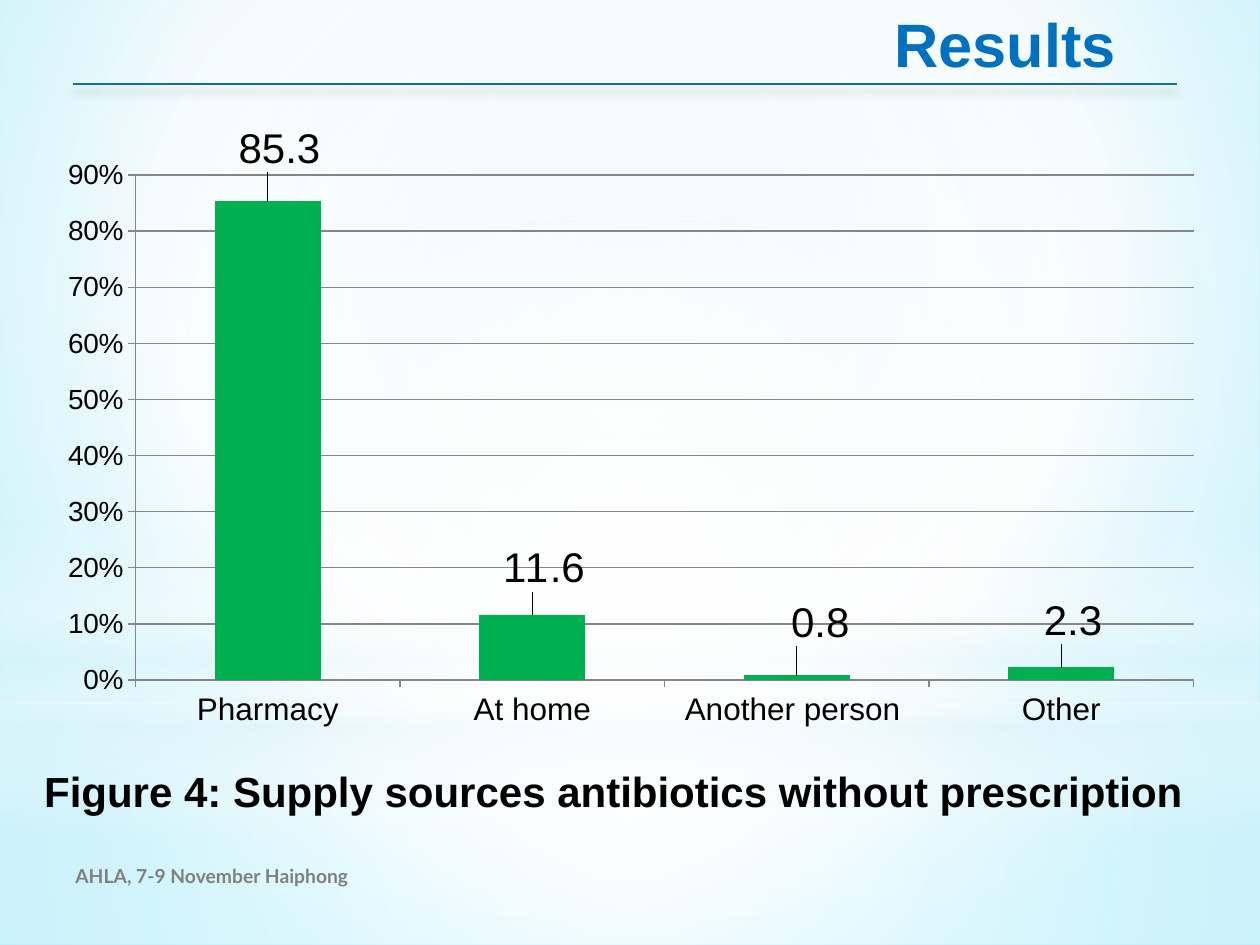
from lxml.etree import SubElement
from pptx import Presentation
from pptx.chart.data import CategoryChartData
from pptx.dml.color import RGBColor
from pptx.enum.chart import XL_CHART_TYPE as ChartType, XL_LABEL_POSITION as LabelPosition
from pptx.enum.chart import XL_TICK_MARK as TickMark
from pptx.enum.shapes import MSO_CONNECTOR as Connector, MSO_SHAPE as Shape
from pptx.enum.text import MSO_ANCHOR as Anchor, MSO_AUTO_SIZE as AutoSize, PP_ALIGN as Align
from pptx.oxml import parse_xml
from pptx.oxml.ns import nsdecls, qn
from pptx.util import Inches, Pt

WIDTH, HEIGHT = Inches(10), Inches(7.5)
CENTER = (50, 50, 50, 50)
BACKDROP = [
    (Shape.RECTANGLE, (0, 0.744, 1, 0.256), CENTER,
     [(0, "FFFFFF", 91), (37, "FFFFFF", 76), (100, "DEF5FA", 79)]),
    (Shape.RECTANGLE, (0, 0, 1, 0.744), CENTER,
     [(0, "FFFFFF", 89), (48, "FFFFFF", 62), (100, "DEF5FA", 79)]),
    (Shape.RECTANGLE, (0, 0.55, 1, 0.333), None,
     [(0, "FFFFFF", 0), (29, "FFFFFF", 30), (45, "DEF5FA", 40),
      (55, "FFFFFF", 26), (65, "DEF5FA", 60), (100, "FFFFFF", 0)]),
    (Shape.OVAL, (0, 0.233, 1, 0.744), CENTER, [(0, "FFFFFF", 100), (56, "FFFFFF", 0)]),
]
SOURCES = [
    ("Pharmacy", 0.853, "85.3", (0.01, -0.04)),
    ("At home", 0.116, "11.6", (0.01, -0.03)),
    ("Another person ", 0.008, "0.8", (0.02, -0.04)),
    ("Other", 0.023, "2.3", (0.01, -0.03)),
]


def color(value):
    return RGBColor.from_string(value)


def place(box):
    left, top, width, height = box
    return (round(left * WIDTH), round(top * HEIGHT),
            round(width * WIDTH), round(height * HEIGHT))


def set_values(target, values):
    for name, value in values.items():
        setattr(target, name, value)


def set_font(font, size, name="Arial", shade="000000", bold=False):
    set_values(font, {"size": Pt(size), "name": name, "bold": bold})
    font.color.rgb = color(shade)


def set_gradient(element, stops, focus):
    stop_xml = "".join(
        f'<a:gs pos="{position * 1000}"><a:srgbClr val="{shade}">'
        f'<a:alpha val="{opacity * 1000}"/></a:srgbClr></a:gs>'
        for position, shade, opacity in stops)
    direction = '<a:lin ang="5400000" scaled="0"/>'
    if focus:
        sides = " ".join(f'{side}="{share * 1000}"' for side, share in zip("ltrb", focus))
        direction = f'<a:path path="circle"><a:fillToRect {sides}/></a:path>'
    gradient = parse_xml(f'<a:gradFill {nsdecls("a")} rotWithShape="1">'
                         f'<a:gsLst>{stop_xml}</a:gsLst>{direction}</a:gradFill>')
    empty = element.find(".//" + qn("a:noFill"))
    empty.getparent().replace(empty, gradient)


def add_backdrop(slide):
    slide.background.fill.background()
    set_gradient(slide._element,
                 [(0, "CDEFF7", 100), (60, "FFFFFF", 100), (100, "7CE7FF", 100)],
                 (20, 10, 20, 60))
    for kind, box, focus, stops in BACKDROP:
        shape = slide.shapes.add_shape(kind, *place(box))
        shape.shadow.inherit = False
        shape.fill.background()
        set_gradient(shape._element, stops, focus)
        shape.line.fill.background()


def add_text(slide, box, text, font, frame_values, align=Align.LEFT):
    frame = slide.shapes.add_textbox(*place(box)).text_frame
    set_values(frame, {"word_wrap": True, **frame_values})
    paragraph = frame.paragraphs[0]
    paragraph.alignment = align
    run = paragraph.add_run()
    run.text = text
    set_font(run.font, **font)


def add_heading(slide, box):
    left, top, width, height = box
    rule_y = round((top + height) * HEIGHT)
    rule = slide.shapes.add_connector(Connector.STRAIGHT, round(left * WIDTH), rule_y,
                                      round((left + width) * WIDTH), rule_y)
    rule.line.width = Pt(1.25)
    rule.line.color.rgb = color("12728A")
    rule._element.spPr.append(parse_xml(
        f'<a:effectLst {nsdecls("a")}><a:outerShdw blurRad="{Pt(5)}" dist="{Pt(4)}" '
        'dir="5400000" rotWithShape="0"><a:srgbClr val="000000"><a:alpha val="20000"/>'
        '</a:srgbClr></a:outerShdw></a:effectLst>'))
    add_text(slide, (left + 0.733 * width, top, 0.226 * width, 1.03 * height), "Results",
             {"size": 35, "shade": "0070C0", "bold": True},
             {"word_wrap": False, "auto_size": AutoSize.SHAPE_TO_FIT_TEXT})


def make_layout(values):
    layout = parse_xml(f'<c:layout {nsdecls("c")}><c:manualLayout/></c:layout>')
    for name, value in values.items():
        SubElement(layout[0], qn(f"c:{name}")).set("val", str(value))
    return layout


def style_axis(axis, size, values):
    set_values(axis, {"major_tick_mark": TickMark.OUTSIDE,
                      "minor_tick_mark": TickMark.NONE, **values})
    set_font(axis.tick_labels.font, size)
    lines = [axis.format.line]
    if axis.has_major_gridlines:
        lines.append(axis.major_gridlines.format.line)
    for line in lines:
        line.color.rgb = color("868686")
        line.width = Pt(0.75)


def add_source_chart(slide, box):
    data = CategoryChartData(number_format="0.00%")
    data.categories = [source[0] for source in SOURCES]
    data.add_series("Series 1", [source[1] for source in SOURCES])
    chart = slide.shapes.add_chart(ChartType.COLUMN_CLUSTERED, *place(box), data).chart
    set_values(chart, {"has_legend": False, "has_title": False})
    set_font(chart.font, 10, "Lato")
    style_axis(chart.category_axis, 18, {"has_major_gridlines": False})
    style_axis(chart.value_axis, 16, {"minimum_scale": 0, "maximum_scale": 0.9,
                                      "major_unit": 0.1, "has_major_gridlines": True})
    set_values(chart.value_axis.tick_labels,
               {"number_format": "0%", "number_format_is_linked": False})

    plot = chart.plots[0]
    set_values(plot, {"gap_width": 150, "vary_by_categories": False})
    series = plot.series[0]
    series.format.fill.solid()
    series.format.fill.fore_color.rgb = color("00B050")
    labels = series.data_labels
    set_values(labels, {"show_value": True, "number_format": "0.00%",
                        "number_format_is_linked": False,
                        "position": LabelPosition.OUTSIDE_END})
    set_font(labels.font, 24, bold=True)
    for index, (_, _, text, (shift_x, shift_y)) in enumerate(SOURCES):
        label = series.points[index].data_label
        run = label.text_frame.paragraphs[0].add_run()
        run.text = text
        set_font(run.font, 24)
        label.position = LabelPosition.OUTSIDE_END
        label_index = labels._element.findall(qn("c:dLbl"))[index].find(qn("c:idx"))
        label_index.addnext(make_layout({"x": shift_x, "y": shift_y}))

    plot_area = chart._chartSpace.find(".//" + qn("c:plotArea"))
    for layout in plot_area.findall(qn("c:layout")):
        plot_area.remove(layout)
    plot_area.insert(0, make_layout({"layoutTarget": "inner", "xMode": "edge", "yMode": "edge",
                                     "x": 0.08, "y": 0.07, "w": 0.9, "h": 0.84}))


def add_caption(slide, box):
    add_text(slide, box, "Figure 4: Supply sources antibiotics without prescription",
             {"size": 24, "bold": True}, {"auto_size": AutoSize.SHAPE_TO_FIT_TEXT},
             Align.CENTER)


def add_footer(slide, box):
    add_text(slide, box, "AHLA, 7-9 November Haiphong",
             {"size": 11, "name": "Lato", "shade": "808080", "bold": True},
             {"vertical_anchor": Anchor.MIDDLE})


def main():
    presentation = Presentation()
    set_values(presentation, {"slide_width": WIDTH, "slide_height": HEIGHT})
    slide = presentation.slides.add_slide(presentation.slide_layouts[6])
    add_backdrop(slide)
    add_heading(slide, (0.058, 0, 0.876, 0.089))
    add_caption(slide, (0.008, 0.803, 0.958, 0.121))
    add_source_chart(slide, (0.033, 0.133, 0.933, 0.644))
    add_footer(slide, (0.05, 0.9, 0.367, 0.053))
    presentation.save("out.pptx")


if __name__ == "__main__":
    main()
